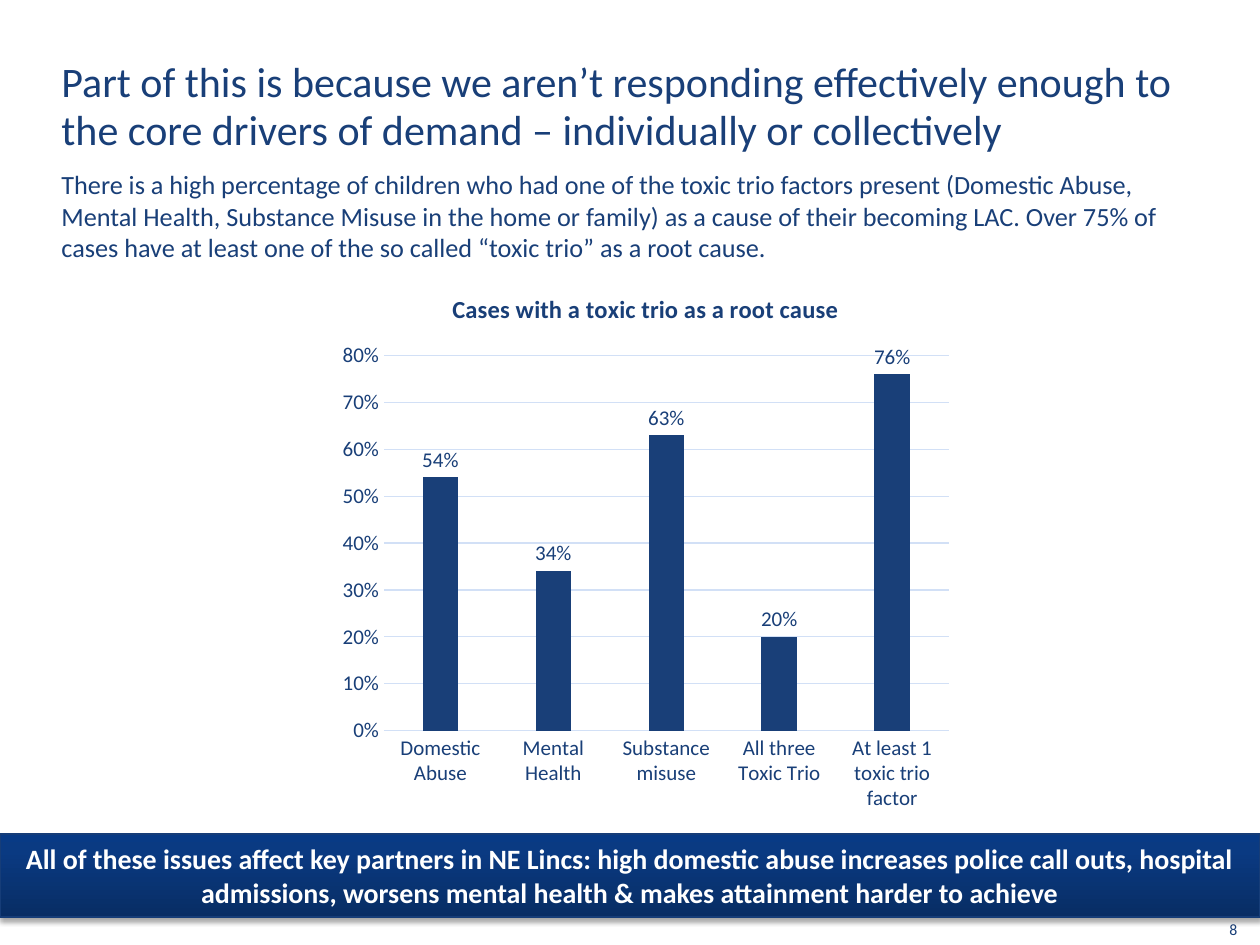
from pptx import Presentation
from pptx.chart.data import CategoryChartData
from pptx.dml.color import RGBColor
from pptx.enum.chart import XL_CHART_TYPE as ChartType
from pptx.enum.chart import XL_LABEL_POSITION as LabelPos
from pptx.enum.chart import XL_TICK_MARK as TickMark
from pptx.enum.shapes import MSO_SHAPE as Shape
from pptx.enum.text import MSO_ANCHOR as Anchor
from pptx.enum.text import PP_ALIGN as Align
from pptx.oxml import parse_xml
from pptx.oxml.ns import nsdecls
from pptx.util import Pt

NAVY = RGBColor(0x19, 0x3F, 0x78)
EDGE = RGBColor(0x16, 0x3D, 0x78)
GRID = RGBColor(0xD2, 0xE0, 0xF6)
WHITE = RGBColor(0xFF, 0xFF, 0xFF)
BANNER_STOPS = [(0, RGBColor(0x08, 0x2D, 0x64)),
                (80, RGBColor(0x0A, 0x3A, 0x82)),
                (100, RGBColor(0x08, 0x3A, 0x85))]
FONT = "Calibri"


def style_font(font, size, color=NAVY, bold=False):
    font.name = FONT
    font.size = Pt(size)
    font.bold = bold
    font.color.rgb = color


def set_text(s, text, size, color=NAVY, bold=False, align=Align.LEFT, anchor=Anchor.TOP):
    tf = s.text_frame
    tf.word_wrap = True
    tf.vertical_anchor = anchor
    tf.text = text
    p = tf.paragraphs[0]
    p.alignment = align
    style_font(p.runs[0].font, size, color, bold)
    return tf


def add_text(slide, box, text, size):
    s = slide.shapes.add_textbox(*map(Pt, box))
    return set_text(s, text, size)


def add_title(slide, box, text):
    tf = add_text(slide, box, text, 24)
    tf.margin_top, tf.margin_bottom = Pt(34), Pt(3)
    tf.paragraphs[0].line_spacing = 0.95


def add_cause_chart(slide, box):
    data = CategoryChartData(number_format="0%")
    data.categories = ["Domestic Abuse", "Mental Health", "Substance misuse",
                       "All three Toxic Trio", "At least 1 toxic trio factor"]
    data.add_series("Series 1", [0.54, 0.34, 0.63, 0.2, 0.76])
    chart = slide.shapes.add_chart(ChartType.COLUMN_CLUSTERED, *map(Pt, box), data).chart
    style_font(chart.font, 10)
    chart.has_legend = False
    chart.has_title = True
    tf = chart.chart_title.text_frame
    tf.text = "Cases with a toxic trio as a root cause"
    style_font(tf.paragraphs[0].runs[0].font, 14, bold=True)

    for axis in (chart.category_axis, chart.value_axis):
        axis.major_tick_mark = axis.minor_tick_mark = TickMark.NONE
        style_font(axis.tick_labels.font, 12)

    axis = chart.value_axis
    axis.minimum_scale, axis.maximum_scale, axis.major_unit = 0, 0.8, 0.1
    axis.format.line.fill.background()
    axis.tick_labels.number_format = "0%"
    axis.tick_labels.number_format_is_linked = False
    for line in (chart.category_axis.format.line, axis.major_gridlines.format.line):
        line.color.rgb, line.width = GRID, Pt(0.75)

    plot = chart.plots[0]
    plot.gap_width, plot.overlap = 219, -27
    plot.vary_by_categories = False
    series = plot.series[0]
    series.format.fill.solid()
    series.format.fill.fore_color.rgb = NAVY
    labels = series.data_labels
    labels.show_value = True
    labels.position = LabelPos.OUTSIDE_END
    labels.number_format = "0%"
    labels.number_format_is_linked = False
    style_font(labels.font, 12)


def add_banner(slide, box, text):
    s = slide.shapes.add_shape(Shape.RECTANGLE, *map(Pt, box))
    s.line.color.rgb, s.line.width = EDGE, Pt(0.75)
    stops = "".join(f'<a:gs pos="{pos * 1000}"><a:srgbClr val="{color}"/></a:gs>'
                    for pos, color in BANNER_STOPS)
    gradient = parse_xml(f'<a:gradFill {nsdecls("a")} rotWithShape="1"><a:gsLst>{stops}</a:gsLst>'
                         '<a:lin ang="16200000" scaled="0"/></a:gradFill>')
    shadow = parse_xml(f'<a:effectLst {nsdecls("a")}><a:outerShdw blurRad="{Pt(3.1)}" '
                       f'dist="{Pt(1.8)}" dir="5400000" rotWithShape="0"><a:srgbClr val="000000">'
                       '<a:alpha val="35000"/></a:srgbClr></a:outerShdw></a:effectLst>')
    line = s.line._get_or_add_ln()
    line.addprevious(gradient)
    line.addnext(shadow)
    set_text(s, text, 16, WHITE, True, Align.CENTER, Anchor.MIDDLE)


def main():
    prs = Presentation()
    prs.slide_width, prs.slide_height = Pt(720), Pt(540)
    slide = prs.slides.add_slide(prs.slide_layouts[6])
    add_text(slide, (695.5, 522, 24.5, 18), "8", 9).word_wrap = False
    add_title(slide, (28, 0, 663, 99.4),
              "Part of this is because we aren’t responding effectively enough to the core "
              "drivers of demand – individually or collectively")
    add_cause_chart(slide, (188.6, 154, 360.7, 315.4))
    add_banner(slide, (0, 476.6, 720, 47.5),
               "All of these issues affect key partners in NE Lincs: high domestic abuse increases "
               "police call outs, hospital admissions, worsens mental health & makes attainment "
               "harder to achieve")
    add_text(slide, (28, 92.6, 663, 62),
             "There is a high percentage of children who had one of the toxic trio factors present "
             "(Domestic Abuse, Mental Health, Substance Misuse in the home or family) as a cause of "
             "their becoming LAC. Over 75% of cases have at least one of the so called “toxic trio” "
             "as a root cause.", 15)
    prs.save("out.pptx")


if __name__ == "__main__":
    main()
